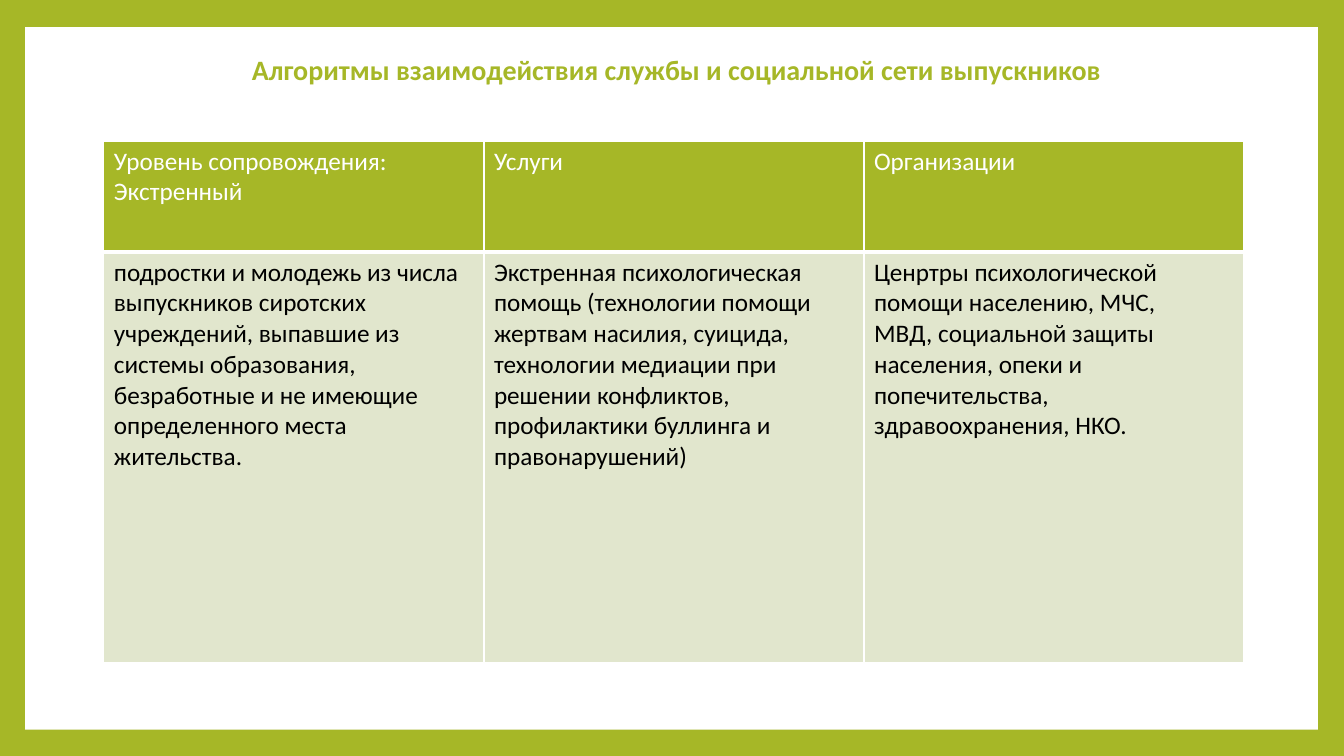
from lxml import etree
from pptx import Presentation
from pptx.dml.color import RGBColor
from pptx.enum import shapes, text
from pptx.oxml import ns
from pptx.util import Inches, Pt

HUES = {"green": "A6B727", "pale": "E1E6CD", "white": "FFFFFF", "black": "000000"}
ROWS = [
    ["Уровень сопровождения: Экстренный", "Услуги", "Организации"],
    [
        "подростки и молодежь из числа выпускников сиротских учреждений, "
        "выпавшие из системы образования, безработные и не имеющие "
        "определенного места жительства.",
        "Экстренная психологическая помощь (технологии помощи жертвам насилия, "
        "суицида, технологии медиации при решении конфликтов, "
        "профилактики буллинга и правонарушений)",
        "Ценртры психологической помощи населению, МЧС,\n"
        "МВД, социальной защиты населения, опеки и попечительства, "
        "здравоохранения, НКО.",
    ],
]
# Fill, font colour, height and bottom border of each row
LOOKS = [("green", "white", 1.1, 3), ("pale", "black", 4.07, 1)]


def style(par, size, hue):
    par.font.name = "Calibri"
    par.font.size = Pt(size)
    par.font.color.rgb = RGBColor.from_string(HUES[hue])


def edge(cell, sides):
    props = cell._tc.get_or_add_tcPr()
    for i, (side, width) in enumerate(sides.items()):
        line = etree.Element(ns.qn("a:ln" + side), w=str(Pt(width)))
        fill = etree.SubElement(line, ns.qn("a:solidFill"))
        etree.SubElement(fill, ns.qn("a:srgbClr"), val=HUES["white"])
        props.insert(i, line)


deck = Presentation()
deck.slide_width, deck.slide_height = Inches(13.33), Inches(7.5)
slide = deck.slides.add_slide(deck.slide_layouts[6])

# Green frame around a white panel
back = slide.background.fill
back.solid()
back.fore_color.rgb = RGBColor.from_string(HUES["green"])
panel = slide.shapes.add_shape(
    shapes.MSO_SHAPE.RECTANGLE, Inches(0.25), Inches(0.27), Inches(12.82), Inches(6.97))
panel.shadow.inherit = False
panel.fill.solid()
panel.fill.fore_color.rgb = RGBColor.from_string(HUES["white"])
panel.line.fill.background()

# Title
title = slide.shapes.add_textbox(Inches(1.92), Inches(0.17), Inches(9.58), Inches(1.08))
frame = title.text_frame
frame.word_wrap = True
frame.vertical_anchor = text.MSO_ANCHOR.MIDDLE
head = frame.paragraphs[0]
head.text = "Алгоритмы взаимодействия службы и социальной сети выпускников"
head.alignment = text.PP_ALIGN.CENTER
head.line_spacing = 0.9
head.font.bold = True
style(head, 20, "green")

# Table
table = slide.shapes.add_table(
    2, 3, Inches(1.03), Inches(1.4), Inches(11.3), Inches(5.17)).table
for col in table.columns:
    col.width = Inches(3.77)
for r, (fill, ink, height, base) in enumerate(LOOKS):
    table.rows[r].height = Inches(height)
    for c, words in enumerate(ROWS[r]):
        cell = table.cell(r, c)
        cell.text = words
        for par in cell.text_frame.paragraphs:
            par.font.bold = False
            style(par, 18, ink)
        cell.fill.solid()
        cell.fill.fore_color.rgb = RGBColor.from_string(HUES[fill])
        edge(cell, {"L": 1, "R": 1, "T": 1, "B": base})

deck.save("out.pptx")
